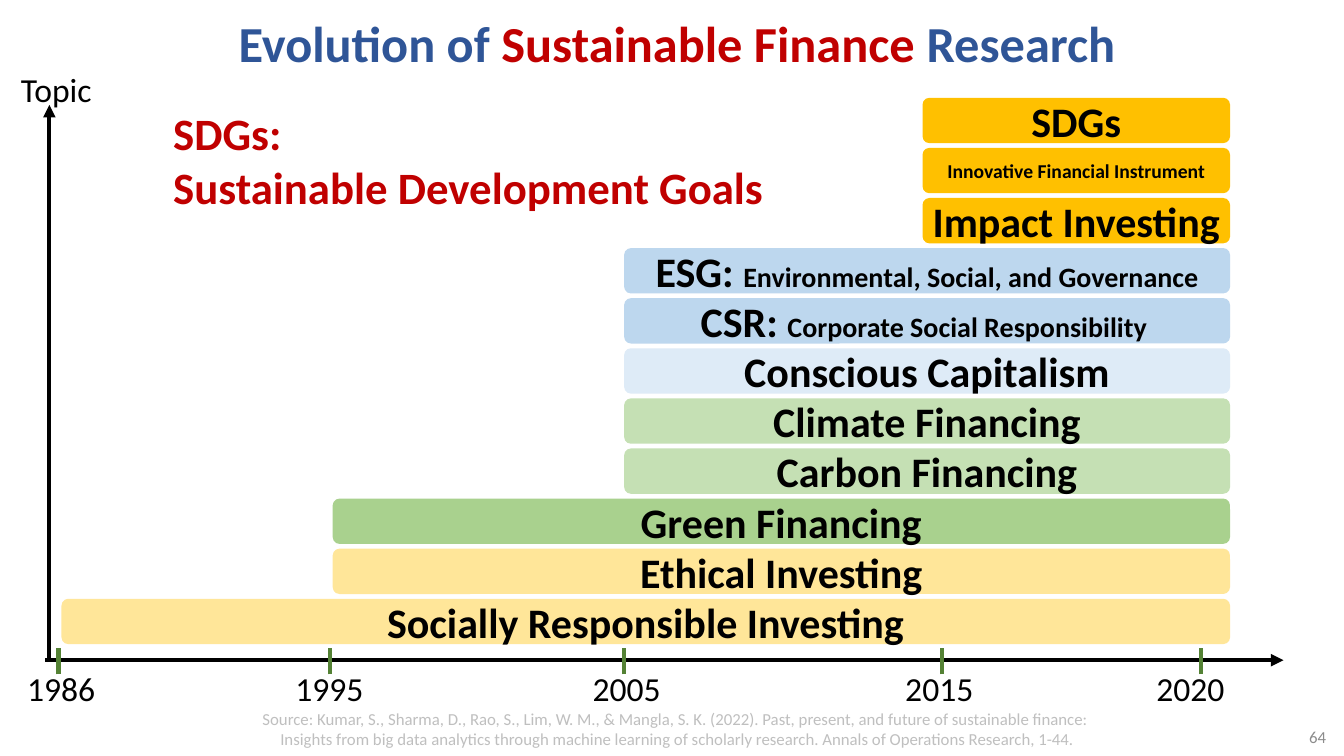
from pptx import Presentation
from pptx.dml.color import RGBColor
from pptx.enum.shapes import MSO_CONNECTOR as Conn, MSO_SHAPE as Shape
from pptx.enum.text import MSO_ANCHOR as Anchor, PP_ALIGN as Align
from pptx.oxml.ns import qn
from pptx.util import Inches, Pt
from lxml.etree import SubElement

BLACK = RGBColor(0x00, 0x00, 0x00)
BLUE = RGBColor(0x2F, 0x55, 0x97)
RED = RGBColor(0xC0, 0x00, 0x00)
GRAY = RGBColor(0x8C, 0x8C, 0x8C)
SILVER = RGBColor(0xBF, 0xBF, 0xBF)
TICK = RGBColor(0x54, 0x82, 0x35)
CREAM = RGBColor(0xFF, 0xE6, 0x99)
GREEN = RGBColor(0xA9, 0xD1, 0x8E)
MINT = RGBColor(0xC5, 0xE0, 0xB4)
PALE = RGBColor(0xDE, 0xEB, 0xF7)
SKY = RGBColor(0xBD, 0xD7, 0xEE)
GOLD = RGBColor(0xFF, 0xC0, 0x00)

deck = Presentation()
deck.slide_width, deck.slide_height = Inches(13.33), Inches(7.5)
slide = deck.slides.add_slide(deck.slide_layouts[6])
shapes = slide.shapes


def add_text(text, box, size, color, bold=False, align=Align.LEFT,
             anchor=Anchor.TOP, wrap=True):
    """Add a text box and return its paragraph; a vertical tab breaks the line."""
    frame = shapes.add_textbox(*map(Inches, box)).text_frame
    frame.word_wrap, frame.vertical_anchor = wrap, anchor
    para = frame.paragraphs[0]
    para.text, para.alignment = text, align
    font = para.font
    font.name, font.size, font.bold = "Calibri", Pt(size), bold
    font.color.rgb = color
    return para


def add_line(x1, y1, x2, y2, color, arrow=False):
    line = shapes.add_connector(Conn.STRAIGHT, *map(Inches, (x1, y1, x2, y2)))
    line.line.color.rgb, line.line.width = color, Pt(3)
    if arrow:
        SubElement(line.line._get_or_add_ln(), qn("a:tailEnd"), type="triangle")
    SubElement(line._element.spPr, qn("a:effectLst"))


# Title, page number and source
title = add_text("", (0.58, 0, 12.27, 0.84), 36, BLUE, True,
                 Align.CENTER, Anchor.MIDDLE)
for words, color in [("Evolution of ", BLUE), ("Sustainable Finance ", RED),
                     ("Research", BLUE)]:
    run = title.add_run()
    run.text, run.font.color.rgb = words, color

add_text("64", (12.2, 7.18, 1.05, 0.26), 12, GRAY,
         align=Align.RIGHT, anchor=Anchor.MIDDLE)
add_text("Source: Kumar, S., Sharma, D., Rao, S., Lim, W. M., & Mangla, S. K. "
         "(2022). Past, present, and future of sustainable finance: \v"
         "Insights from big data analytics through machine learning of "
         "scholarly research. Annals of Operations Research, 1-44.",
         (0.92, 6.98, 11.6, 0.5), 12, SILVER, align=Align.CENTER)

# Axes
add_line(0.45, 6.55, 12.73, 6.55, BLACK, arrow=True)
add_line(0.49, 6.57, 0.49, 1.04, BLACK, arrow=True)
add_text("Topic", (0.11, 0.63, 0.91, 0.5), 24, BLACK, wrap=False)
for year, x, left in [("1986", 0.58, 0.17), ("1995", 3.27, 2.83),
                      ("2005", 6.19, 5.78), ("2015", 9.34, 8.88),
                      ("2020", 11.91, 11.37)]:
    add_line(x, 6.69, x, 6.43, TICK)
    add_text(year, (left, 6.58, 0.88, 0.5), 24, BLACK, wrap=False)

# Topic bars from the top down: left edge, fill, text runs with sizes
RIGHT, TOP, LAST, HIGH = 12.2, 0.97, 5.94, 0.45
bars = [
    (9.15, GOLD, [("SDGs", 30)]),
    (9.15, GOLD, [("Innovative Financial Instrument", 14)]),
    (9.15, GOLD, [("Impact Investing", 30)]),
    (6.19, SKY, [("ESG: ", 30), ("Environmental, Social, and Governance", 20)]),
    (6.19, SKY, [("CSR: ", 30), ("Corporate Social Responsibility ", 20)]),
    (6.19, PALE, [("Conscious Capitalism", 30)]),
    (6.19, MINT, [("Climate Financing", 30)]),
    (6.19, MINT, [("Carbon Financing", 30)]),
    (3.3, GREEN, [("Green Financing", 30)]),
    (3.3, CREAM, [("Ethical Investing", 30)]),
    (0.61, CREAM, [("Socially Responsible Investing", 30)]),
]
step = (LAST - TOP) / (len(bars) - 1)
for row, (left, fill, parts) in enumerate(bars):
    bar = shapes.add_shape(Shape.ROUNDED_RECTANGLE, Inches(left),
                           Inches(TOP + row * step),
                           Inches(RIGHT - left), Inches(HIGH))
    bar.adjustments[0] = 0.15
    bar.shadow.inherit = False
    bar.fill.solid()
    bar.fill.fore_color.rgb = fill
    bar.line.fill.background()
    frame = bar.text_frame
    frame.margin_left = frame.margin_right = 0
    frame.margin_top = frame.margin_bottom = 0
    frame.vertical_anchor = Anchor.MIDDLE
    para = frame.paragraphs[0]
    para.alignment = Align.CENTER
    para.font.name, para.font.bold = "Calibri", True
    para.font.color.rgb = BLACK
    for words, size in parts:
        run = para.add_run()
        run.text, run.font.size = words, Pt(size)

add_text("SDGs: \vSustainable Development Goals", (1.62, 1, 7, 1.18),
         32, RED, True)

deck.save("out.pptx")
